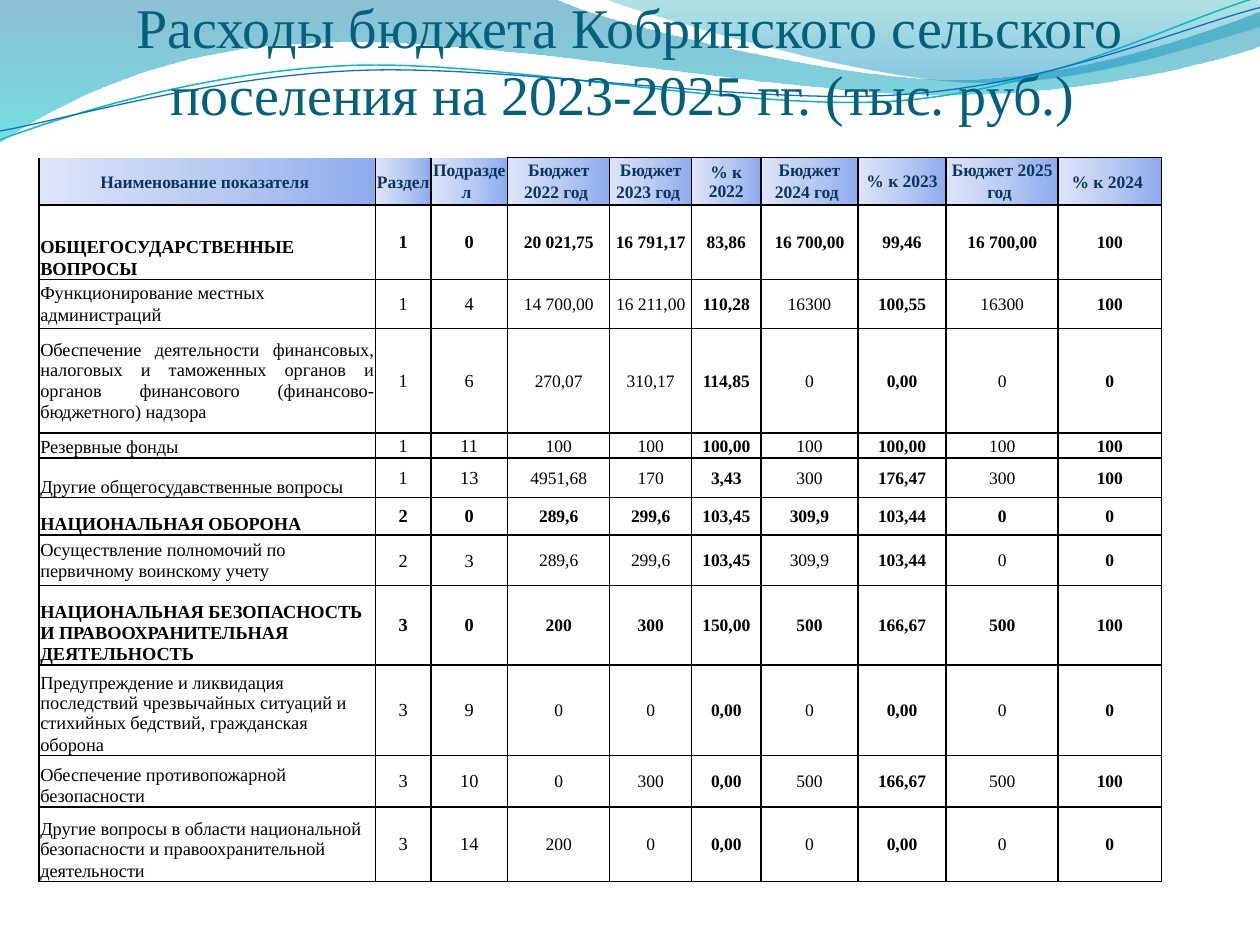
from math import cos, radians, sin

from lxml import etree
from pptx import Presentation
from pptx.dml.color import RGBColor
from pptx.enum.text import MSO_ANCHOR, PP_ALIGN
from pptx.oxml import parse_xml
from pptx.oxml.ns import nsdecls, qn
from pptx.util import Inches, Pt

FONT = "Times New Roman"
WIDTH, HEIGHT = 10, 7.5
TITLE = "Расходы бюджета Кобринского сельского поселения на 2023-2025 гг. (тыс. руб.) "

# Waves: start point, then segments of one point (line) or three (curve)
BANDS = [
    ((0, 0), [
        [(4.4, -0.01)],
        [(4.76, 0.17), (6.64, 0.63), (7.58, 0.63)],
        [(8.53, 0.63), (9.58, 0.26), (10, 0.09)],
        [(10.01, 0.36)],
        [(9.83, 0.44), (8.7, 0.76), (7.46, 0.75)],
        [(6.22, 0.75), (3.82, 0.28), (2.57, 0.34)],
        [(1.29, 0.36), (0.46, 0.83), (-0.01, 1.13)],
        [(0, 0)],
    ], [(0, "0074A1", 45), (100, "00C6CF", 55)]),
    ((4.79, -0.01), [
        [(5.09, 0.11), (6.82, 0.62), (7.69, 0.65)],
        [(8.56, 0.69), (9.61, 0.32), (10, 0.21)],
        [(10, 0)],
        [(4.79, -0.01)],
    ], [(0, "00A1A9", 30), (80, "008BBF", 45)]),
]
STRANDS = [
    ((0, 1.11), [
        [(0.48, 0.93), (1.58, 0.57), (2.77, 0.52)],
        [(3.95, 0.47), (5.93, 0.89), (7.13, 0.8)],
        [(8.33, 0.71), (9.38, 0.15), (9.98, -0.02)],
    ], (4.99, 0.57), "0AB8BF", 0.85),
    ((0, 1.04), [
        [(0.47, 0.96), (1.64, 0.61), (2.83, 0.56)],
        [(4.03, 0.51), (5.97, 0.84), (7.17, 0.75)],
        [(8.36, 0.67), (9.41, 0.21), (10, 0.06)],
    ], (5, 0.59), "0F6FC6", 0.75),
]
TILT = 2.7

# Budget table
HEADER = ["Наименование показателя", "Раздел", "Подраздел", "Бюджет 2022 год",
          "Бюджет 2023 год", "% к 2022", "Бюджет 2024 год", "% к 2023",
          "Бюджет 2025 год", "% к 2024"]
EXPENSES = [
    ["ОБЩЕГОСУДАРСТВЕННЫЕ ВОПРОСЫ", "1", "0", "20 021,75", "16 791,17", "83,86",
     "16 700,00", "99,46", "16 700,00", "100"],
    ["Функционирование местных администраций", "1", "4", "14 700,00", "16 211,00",
     "110,28", "16300", "100,55", "16300", "100"],
    ["Обеспечение деятельности финансовых, налоговых и таможенных органов и органов "
     "финансового (финансово-бюджетного) надзора", "1", "6", "270,07", "310,17",
     "114,85", "0", "0,00", "0", "0"],
    ["Резервные фонды", "1", "11", "100", "100", "100,00", "100", "100,00", "100", "100"],
    ["Другие общегосудавственные вопросы", "1", "13", "4951,68", "170", "3,43", "300",
     "176,47", "300", "100"],
    ["НАЦИОНАЛЬНАЯ ОБОРОНА", "2", "0", "289,6", "299,6", "103,45", "309,9", "103,44",
     "0", "0"],
    ["Осуществление полномочий по первичному воинскому учету", "2", "3", "289,6",
     "299,6", "103,45", "309,9", "103,44", "0", "0"],
    ["НАЦИОНАЛЬНАЯ БЕЗОПАСНОСТЬ И ПРАВООХРАНИТЕЛЬНАЯ ДЕЯТЕЛЬНОСТЬ", "3", "0", "200",
     "300", "150,00", "500", "166,67", "500", "100"],
    ["Предупреждение и ликвидация последствий чрезвычайных ситуаций и стихийных "
     "бедствий, гражданская оборона", "3", "9", "0", "0", "0,00", "0", "0,00", "0", "0"],
    ["Обеспечение противопожарной безопасности", "3", "10", "0", "300", "0,00", "500",
     "166,67", "500", "100"],
    ["Другие вопросы в области национальной безопасности и правоохранительной "
     "деятельности", "3", "14", "200", "0", "0,00", "0", "0,00", "0", "0"],
]
COLUMNS = [2.67, 0.44, 0.61, 0.81, 0.65, 0.55, 0.77, 0.7, 0.89, 0.82]
ROWS = [0.3, 0.59, 0.39, 0.83, 0.2, 0.31, 0.3, 0.4, 0.63, 0.61, 0.41, 0.59]
TABLE_HEIGHT = 5.73
HEADER_STOPS = [(0, "8EABEE", 100), (50, "BBCBF2", 100), (100, "DEE5F8", 100)]
CENTERED_NAMES = {2, 3, 7}
JUSTIFIED_ROW = 3


def rgb(color):
    return RGBColor.from_string(color)


def write(frame, text, *, size, color="000000", bold=False, align=PP_ALIGN.CENTER,
          tail=None):
    """Write one paragraph; tail is the size of its closing space."""
    frame.word_wrap = True
    paragraph = frame.paragraphs[0]
    paragraph.alignment = align
    parts = [(text, size, bold)] + ([(" ", tail, False)] if tail else [])
    for part, points, weight in parts:
        run = paragraph.add_run()
        run.text = part
        run.font.name, run.font.size, run.font.bold = FONT, Pt(points), weight
        run.font.color.rgb = rgb(color)


def fill_gradient(fill, properties, stops, angle):
    """Swap the empty fill for a linear gradient with transparency."""
    fill.background()
    stop_xml = "".join(
        f'<a:gs pos="{place * 1000}"><a:srgbClr val="{color}">'
        f'<a:alpha val="{alpha * 1000}"/></a:srgbClr></a:gs>'
        for place, color, alpha in stops)
    gradient = parse_xml(f'<a:gradFill {nsdecls("a")}><a:gsLst>{stop_xml}</a:gsLst>'
                         f'<a:lin ang="{angle * 60000}" scaled="0"/></a:gradFill>')
    properties.replace(properties.find(qn("a:noFill")), gradient)


def turn(point, center, degrees):
    dx, dy = point[0] - center[0], point[1] - center[1]
    c, s = cos(radians(degrees)), sin(radians(degrees))
    return center[0] + dx * c - dy * s, center[1] + dx * s + dy * c


def add_wave(slide, start, segments, close):
    """Lay all points as lines, then join each group of three into a curve."""
    points = [(Inches(x), Inches(y)) for x, y in [start, *sum(segments, [])]]
    builder = slide.shapes.build_freeform(*points[0])
    builder.add_line_segments(points[1:], close=close)
    wave = builder.convert_to_shape()
    wave.shadow.inherit = False
    lines = iter(list(wave._element.iter(qn("a:lnTo"))))
    for segment in segments:
        group = [next(lines) for _ in segment]
        if len(group) == 3:
            curve = etree.Element(qn("a:cubicBezTo"))
            group[0].addprevious(curve)
            for line in group:
                curve.append(line[0])
                line.getparent().remove(line)
    return wave


def set_borders(cell, open_top):
    properties = cell._tc.get_or_add_tcPr()
    for position, side in enumerate(("lnL", "lnR", "lnT", "lnB")):
        border = etree.Element(qn(f"a:{side}"), w=str(Pt(1)))
        if side == "lnT" and open_top:
            etree.SubElement(border, qn("a:noFill"))
        else:
            solid = etree.SubElement(border, qn("a:solidFill"))
            etree.SubElement(solid, qn("a:srgbClr"), val="000000")
        properties.insert(position, border)


def add_budget(slide):
    budget = slide.shapes.add_table(len(ROWS), len(COLUMNS), Inches(0.31), Inches(1.25),
                                    Inches(sum(COLUMNS)), Inches(TABLE_HEIGHT))
    table = budget.table
    table.first_row = table.horz_banding = False
    for column, width in zip(table.columns, COLUMNS):
        column.width = Inches(width)
    for row, height in zip(table.rows, ROWS):
        row.height = Inches(height)
    budget.height = Inches(TABLE_HEIGHT)

    for r, values in enumerate([HEADER, *EXPENSES]):
        for c, value in enumerate(values):
            cell = table.cell(r, c)
            cell.margin_left = cell.margin_right = cell.margin_top = Inches(0.01)
            cell.margin_bottom = 0
            cell.vertical_anchor = MSO_ANCHOR.MIDDLE
            if r == 0:
                write(cell.text_frame, value, size=10, color="083763", bold=True,
                      tail=None if c in (5, 7) else 12)
                fill_gradient(cell.fill, cell._tc.get_or_add_tcPr(), HEADER_STOPS, 180)
            else:
                is_section = values[2] == "0"
                is_percent = HEADER[c].startswith("%")
                align = PP_ALIGN.CENTER
                if c == 0:
                    align = PP_ALIGN.JUSTIFY if r == JUSTIFIED_ROW else PP_ALIGN.LEFT
                    if r not in CENTERED_NAMES:
                        cell.vertical_anchor = MSO_ANCHOR.BOTTOM
                write(cell.text_frame, value, size=10.5 if c < 3 else 10,
                      bold=is_section or is_percent, align=align,
                      tail=11 if c == 0 else None)
                cell.fill.background()
            set_borders(cell, open_top=r == 0 and c < 3)


def main():
    deck = Presentation()
    deck.slide_width, deck.slide_height = Inches(WIDTH), Inches(HEIGHT)
    slide = deck.slides.add_slide(deck.slide_layouts[6])

    # Waves along the top
    for start, segments, stops in BANDS:
        band = add_wave(slide, start, segments, close=True)
        fill_gradient(band.fill, band._element.spPr, stops, 90)
        band.line.fill.background()
    for start, segments, center, color, weight in STRANDS:
        level = [[turn(point, center, TILT) for point in segment] for segment in segments]
        strand = add_wave(slide, turn(start, center, TILT), level, close=False)
        strand.rotation = -TILT
        strand.fill.background()
        strand.line.color.rgb = rgb(color)
        strand.line.width = Pt(weight)

    # Title
    title = slide.shapes.add_textbox(Inches(0.5), Inches(0.15), Inches(9), Inches(0.86))
    frame = title.text_frame
    frame.margin_left = frame.margin_right = frame.margin_bottom = 0
    frame.vertical_anchor = MSO_ANCHOR.BOTTOM
    write(frame, TITLE, size=32, color="04617B")

    add_budget(slide)
    deck.save("out.pptx")


if __name__ == "__main__":
    main()
